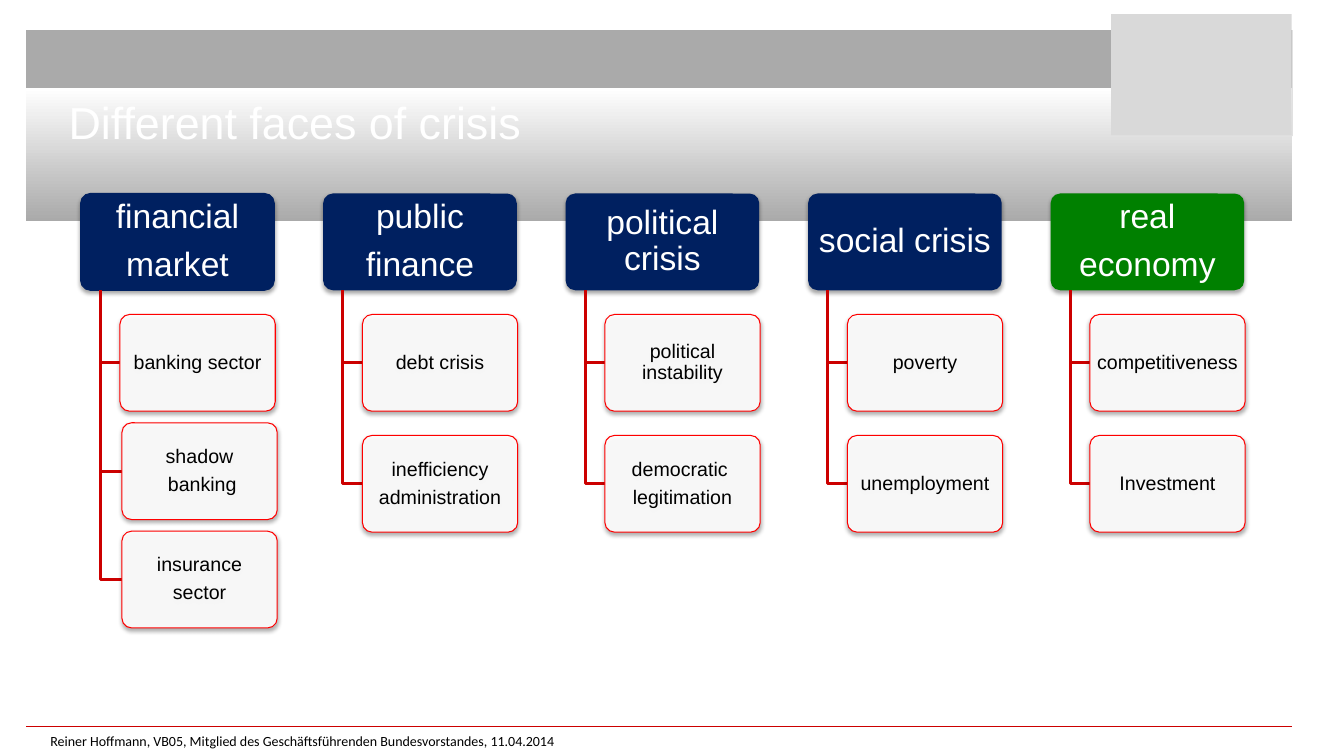
from pptx import Presentation
from pptx.dml.color import RGBColor as RGB
from pptx.enum.shapes import MSO_CONNECTOR as LINK, MSO_SHAPE as SHAPE
from pptx.enum.text import MSO_ANCHOR as ANCHOR, PP_ALIGN as ALIGN
from pptx.oxml import parse_xml
from pptx.oxml.ns import nsdecls
from pptx.util import Inches, Pt

COLORS = {
    "white": "FFFFFF", "black": "000000", "gray": "AAAAAA", "pale": "D9D9D9",
    "navy": "002060", "green": "008000", "red": "FF0000", "branch": "CC0000",
}

# Head lines, head color, then the lines of each box below it
TREES = [
    (["financial", "market"], "navy",
     [["banking sector"], ["shadow", " banking"], ["insurance", "sector"]]),
    (["public", "finance"], "navy",
     [["debt crisis"], ["inefficiency", "administration"]]),
    (["political crisis"], "navy",
     [["political instability"], ["democratic ", "legitimation"]]),
    (["social crisis"], "navy", [["poverty"], ["unemployment"]]),
    (["real", "economy"], "green", [["competitiveness"], ["Investment"]]),
]
LEFT, TOP, PITCH = 0.8, 1.92, 2.405
HEAD_W, BOX_W, BOX_H = 1.92, 1.54, 0.96
INDENT = 0.195
FIRST = 3.12


def color(name):
    return RGB.from_string(COLORS[name])


def add_shadow(shape):
    shape._element.spPr.append(parse_xml(
        f'<a:effectLst {nsdecls("a")}><a:outerShdw blurRad="{Pt(3.1)}" '
        f'dist="{Pt(1.8)}" dir="5400000" algn="ctr" rotWithShape="0">'
        f'<a:srgbClr val="{COLORS["black"]}"><a:alpha val="35000"/>'
        '</a:srgbClr></a:outerShdw></a:effectLst>'))


def add_block(slide, kind, x, y, w, h, fill):
    shape = slide.shapes.add_shape(kind, Inches(x), Inches(y), Inches(w), Inches(h))
    shape.shadow.inherit = False
    shape.fill.solid()
    shape.fill.fore_color.rgb = color(fill)
    shape.line.fill.background()
    return shape


def set_text(frame, lines, size, ink, font="Arial"):
    frame.word_wrap = True
    frame.text = "\n".join(lines)
    for para in frame.paragraphs:
        for run in para.runs:
            run.font.size = Pt(size)
            run.font.name = font
            run.font.color.rgb = color(ink)


def set_insets(frame, side, edge):
    frame.margin_left = frame.margin_right = Inches(side)
    frame.margin_top = frame.margin_bottom = Inches(edge)


def add_label(slide, x, y, w, h, text, size, ink, font, anchor, edge=0):
    frame = slide.shapes.add_textbox(
        Inches(x), Inches(y), Inches(w), Inches(h)).text_frame
    set_text(frame, [text], size, ink, font)
    set_insets(frame, 0, edge)
    frame.vertical_anchor = anchor
    return frame


def add_card(slide, x, y, w, lines, fill, size, ink, side, edge):
    """Add a rounded box with a soft shadow and centred text."""
    card = add_block(slide, SHAPE.ROUNDED_RECTANGLE, x, y, w, BOX_H, fill)
    card.adjustments[0] = 0.1
    card.shadow.inherit = True
    add_shadow(card)
    frame = card.text_frame
    set_text(frame, lines, size, ink)
    set_insets(frame, side, edge)
    frame.vertical_anchor = ANCHOR.MIDDLE
    for para in frame.paragraphs:
        para.alignment = ALIGN.CENTER
        para.line_spacing = 0.9
        para.space_after = Pt(size * 0.35)
    return card


def set_line(shape, name, width):
    shape.line.color.rgb = color(name)
    shape.line.width = Pt(width)


def add_branch(slide, x, y, end_x, end_y):
    route = slide.shapes.build_freeform(Inches(x), Inches(y))
    route.add_line_segments(
        [(Inches(x), Inches(end_y)), (Inches(end_x), Inches(end_y))], close=False)
    branch = route.convert_to_shape()
    branch.shadow.inherit = False
    branch.fill.background()
    set_line(branch, "branch", 2)


def add_tree(slide, x, lines, fill, boxes):
    head = add_card(slide, x, TOP, HEAD_W, lines, fill, 24, "white", 0.05, 0.03)
    three = len(boxes) == 3
    if three:
        set_line(head, fill, 0.75)
    step = 1.075 if three else 1.2
    trunk = x + INDENT
    for row, text in enumerate(boxes):
        shift = 0.02 if three and row else 0
        left = trunk + INDENT + shift
        y = FIRST + row * step
        add_branch(slide, trunk, TOP + BOX_H, left, y + BOX_H / 2)
        box = add_card(slide, left, y, BOX_W, text, "white", 14, "black", 0.03, 0.02)
        set_line(box, "red", 0.75)
        tint = box.fill._xPr.solidFill[0]
        tint.append(parse_xml(f'<a:alpha {nsdecls("a")} val="90000"/>'))


def add_banner(slide):
    add_block(slide, SHAPE.RECTANGLE, 0.26, 0.3, 12.56, 1.05, "gray")
    fade = add_block(slide, SHAPE.RECTANGLE, 0.26, 0.87, 12.56, 1.32, "gray").fill
    fade.gradient()
    fade.gradient_angle = 270
    for stop, name in zip(fade.gradient_stops, ("white", "gray")):
        stop.color.rgb = color(name)
    add_block(slide, SHAPE.RECTANGLE, 11.02, 0.14, 1.79, 1.2, "pale")


def add_rule(slide):
    rule = slide.shapes.add_connector(
        LINK.STRAIGHT, Inches(0.26), Inches(7.21), Inches(12.81), Inches(7.21))
    set_line(rule, "branch", 0.75)
    rule._element.spPr.append(parse_xml(f'<a:effectLst {nsdecls("a")}/>'))


def main():
    deck = Presentation()
    deck.slide_width, deck.slide_height = Inches(13.33), Inches(7.5)
    slide = deck.slides.add_slide(deck.slide_layouts[6])
    add_banner(slide)
    add_rule(slide)
    title = add_label(slide, 0.68, 0.37, 9.45, 1.15, "Different faces of crisis",
                      32, "white", "Arial", ANCHOR.BOTTOM, 0.05)
    title.paragraphs[0].line_spacing = Pt(40)
    for col, (lines, fill, boxes) in enumerate(TREES):
        add_tree(slide, LEFT + col * PITCH, lines, fill, boxes)
    add_label(slide, 0.5, 7.21, 7.64, 0.29,
              "Reiner Hoffmann, VB05, Mitglied des Geschäftsführenden "
              "Bundesvorstandes, 11.04.2014", 10, "black", "Calibri", ANCHOR.MIDDLE)
    deck.save("out.pptx")


if __name__ == "__main__":
    main()
